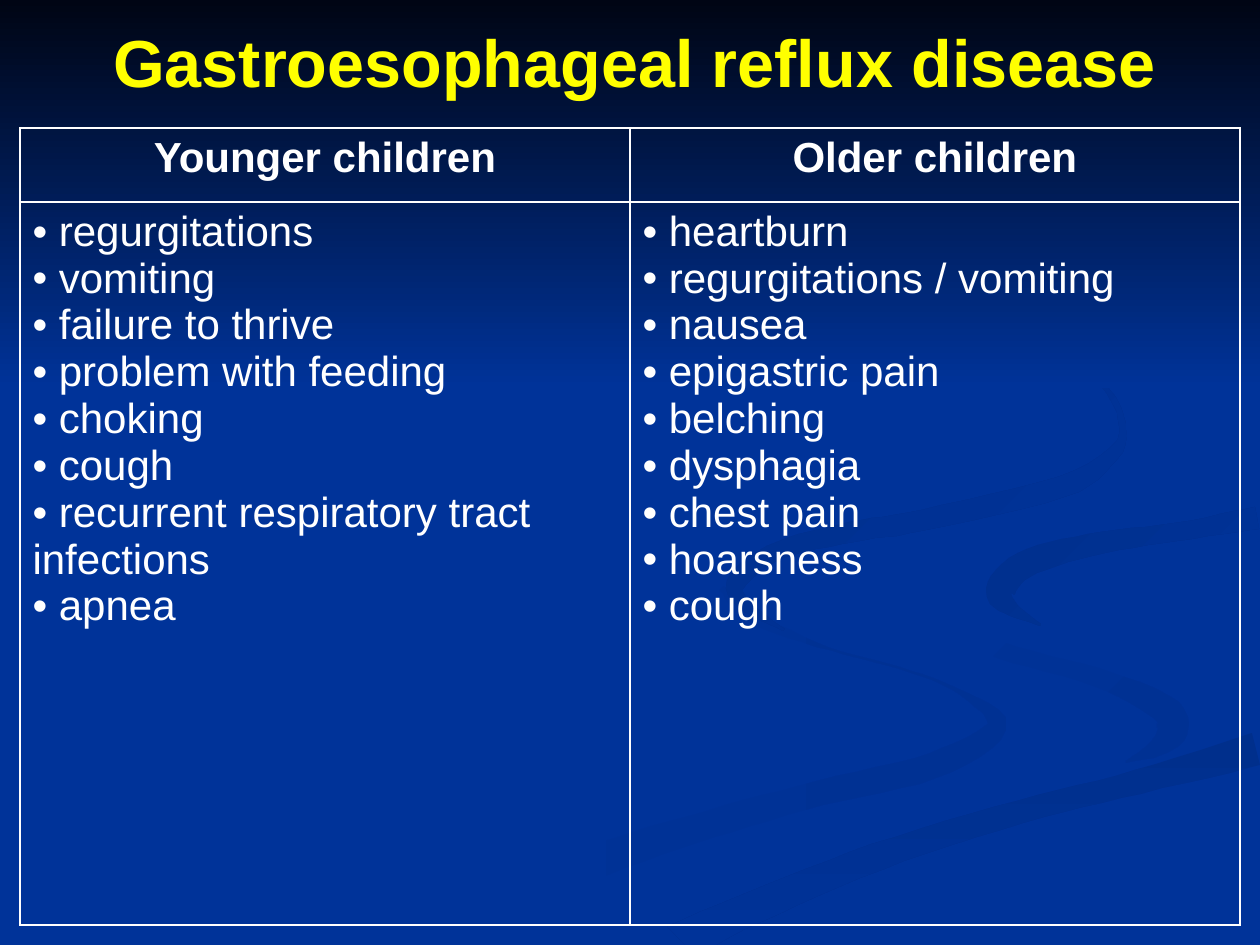
from dataclasses import dataclass
from math import hypot

from lxml.etree import SubElement
from pptx import Presentation
from pptx.dml.color import RGBColor
from pptx.enum.shapes import MSO_SHAPE
from pptx.enum.text import MSO_ANCHOR, PP_ALIGN
from pptx.oxml import parse_xml
from pptx.oxml.ns import nsdecls, qn
from pptx.util import Emu, Pt

EMU_PER_PX = 914400 / 126
PAGE_BOX = (0, 0, 1260, 945)
STEPS_PER_SPAN = 6


@dataclass(frozen=True)
class Theme:
    font: str = "Arial"
    background: str = "003399"
    night: str = "000514"
    shade: str = "003193"
    deep_shade: str = "002F8C"
    title: str = "FFFF00"
    text: str = "FFFFFF"
    title_size: int = 38
    body_size: int = 24
    border_width: int = 1


@dataclass(frozen=True)
class Ribbon:
    """A brush stroke: stations of (x, y, width), and its gradient."""
    stations: tuple
    first: str
    last: str
    angle: int


THEME = Theme()

LEFT_SWIRL = Ribbon(
    ((722, 588, 5), (753, 618, 12), (830, 649, 3), (900, 668, 2), (960, 692, 5),
     (997, 727, 20), (932, 766, 26), (820, 793, 25), (711, 824, 28), (602, 859, 33),
     (500, 900, 38), (416, 944, 40)),
    THEME.background, THEME.shade, 0)
RIGHT_SWIRL = Ribbon(
    ((912, 587, 2), (932, 616, 10), (1000, 650, 16), (1096, 677, 18), (1163, 708, 28),
     (1172, 731, 31), (1155, 749, 16), (1126, 762, 2)),
    THEME.background, THEME.shade, 45)
LOWER_BAND = Ribbon(
    ((1257, 749, 34), (1138, 782, 24), (1020, 812, 23), (877, 857, 27), (755, 907, 32),
     (676, 944, 40)),
    THEME.deep_shade, THEME.background, 90)
RIGHT_HOOK = Ribbon(
    ((1257, 518, 22), (1176, 532, 18), (1090, 545, 22), (1024, 565, 27), (1000, 592, 28),
     (1012, 609, 14), (1041, 625, 2)),
    THEME.deep_shade, THEME.background, 45)
UPPER_SWIRL = Ribbon(
    ((960, 294, 1), (1062, 350, 4), (1108, 391, 5), (1123, 430, 7), (1110, 457, 14),
     (1061, 487, 22), (924, 520, 21), (852, 532, 20), (780, 550, 18), (738, 580, 19),
     (743, 603, 12), (784, 630, 2)),
    THEME.deep_shade, THEME.background, 45)
RIBBONS = (LEFT_SWIRL, RIGHT_SWIRL, LOWER_BAND, RIGHT_HOOK, UPPER_SWIRL)

SYMPTOMS = {
    "Younger children": [
        "regurgitations", "vomiting", "failure to thrive", "problem with feeding", "choking",
        "cough", "recurrent respiratory tract infections", "apnea"],
    "Older children": [
        "heartburn", "regurgitations / vomiting", "nausea", "epigastric pain", "belching",
        "dysphagia", "chest pain", "hoarsness", "cough"]}


def px(length):
    return Emu(round(length * EMU_PER_PX))


def style(para, size, color, bold=False, align=PP_ALIGN.LEFT):
    para.alignment = align
    para.font.name, para.font.size, para.font.bold = THEME.font, Pt(size), bold
    para.font.color.rgb = RGBColor.from_string(color)


def fill_gradient(shape, first, last, angle):
    """Fill from first to last colour, with the angle measured clockwise."""
    shape.shadow.inherit = False
    shape.line.fill.background()
    shape.fill.gradient()
    shape.fill.gradient_angle = -angle % 360
    for stop, color in zip(shape.fill.gradient_stops, (first, last)):
        stop.color.rgb = RGBColor.from_string(color)


def smooth(stations):
    """Return samples of a Catmull-Rom curve through the stations."""
    padded = [stations[0], *stations, stations[-1]]
    samples = []
    for span in zip(padded, padded[1:], padded[2:], padded[3:]):
        for step in range(STEPS_PER_SPAN):
            t = step / STEPS_PER_SPAN
            samples.append(tuple(
                b + t / 2 * (c - a + t * (2 * a - 5 * b + 4 * c - d
                                          + t * (3 * b - a - 3 * c + d)))
                for a, b, c, d in zip(*span)))
    return samples + [stations[-1]]


def ribbon_outline(stations):
    """Offset the smoothed spine by half its width to either side."""
    spine = smooth(stations)
    one_edge, other_edge = [], []
    for before, (x, y, width), after in zip(spine[:1] + spine, spine, spine[1:] + spine[-1:]):
        run, rise = after[0] - before[0], after[1] - before[1]
        reach = width / 2 / hypot(run, rise)
        one_edge.append((x - rise * reach, y + run * reach))
        other_edge.append((x + rise * reach, y - run * reach))
    return one_edge + other_edge[::-1]


def add_ribbon(page, box, ribbon):
    left, top, width, height = box
    points = [(left + min(max(x, 0), width), top + min(max(y, 0), height))
              for x, y in ribbon_outline(ribbon.stations)]
    builder = page.shapes.build_freeform(*points[0], scale=EMU_PER_PX)
    builder.add_line_segments(points[1:], close=True)
    fill_gradient(builder.convert_to_shape(), ribbon.first, ribbon.last, ribbon.angle)


def add_backdrop(page, box, sky_height):
    left, top, width, _ = box
    for ribbon in RIBBONS:
        add_ribbon(page, box, ribbon)
    sky = page.shapes.add_shape(MSO_SHAPE.RECTANGLE, *map(px, (left, top, width, sky_height)))
    fill_gradient(sky, THEME.night, THEME.background, 90)


def add_title(page, box, text):
    frame = page.shapes.add_textbox(*map(px, box)).text_frame
    frame.word_wrap = True
    frame.vertical_anchor = MSO_ANCHOR.MIDDLE
    para = frame.paragraphs[0]
    para.text = text
    style(para, THEME.title_size, THEME.title, True, PP_ALIGN.CENTER)


def outline_cell(cell):
    cell.fill.background()
    properties = cell._tc.get_or_add_tcPr()
    for index, side in enumerate(("lnL", "lnR", "lnT", "lnB")):
        properties.insert(index, parse_xml(
            f'<a:{side} {nsdecls("a")} w="{Pt(THEME.border_width)}"><a:solidFill>'
            f'<a:srgbClr val="{THEME.text}"/></a:solidFill></a:{side}>'))


def add_bullet(para):
    properties = para._p.get_or_add_pPr()
    properties.set("marL", "0")
    properties.set("indent", "0")
    SubElement(properties, qn("a:buFont")).set("typeface", THEME.font)
    SubElement(properties, qn("a:buChar")).set("char", "•")


def add_symptom_table(page, box, columns, header_height):
    _, _, width, height = box
    table = page.shapes.add_table(2, len(columns), *map(px, box)).table
    table.first_row = table.horz_banding = False
    table.rows[0].height = px(header_height)
    table.rows[1].height = px(height - header_height)
    for index, (heading, symptoms) in enumerate(columns.items()):
        table.columns[index].width = px(width / len(columns))
        header, body = table.cell(0, index), table.cell(1, index)
        header.text = heading
        style(header.text_frame.paragraphs[0], THEME.body_size, THEME.text, True,
              PP_ALIGN.CENTER)
        body.text = "\n".join(f" {symptom}" for symptom in symptoms)
        for para in body.text_frame.paragraphs:
            style(para, THEME.body_size, THEME.text)
            add_bullet(para)
        outline_cell(header)
        outline_cell(body)


def main():
    deck = Presentation()
    deck.slide_width, deck.slide_height = map(px, PAGE_BOX[2:])
    page = deck.slides.add_slide(deck.slide_layouts[6])
    page.background.fill.solid()
    page.background.fill.fore_color.rgb = RGBColor.from_string(THEME.background)
    add_backdrop(page, PAGE_BOX, 388)
    add_title(page, (25, 16, 1220, 90), "Gastroesophageal reflux disease")
    add_symptom_table(page, (20, 128, 1220, 797), SYMPTOMS, 74)
    deck.save("out.pptx")


if __name__ == "__main__":
    main()
